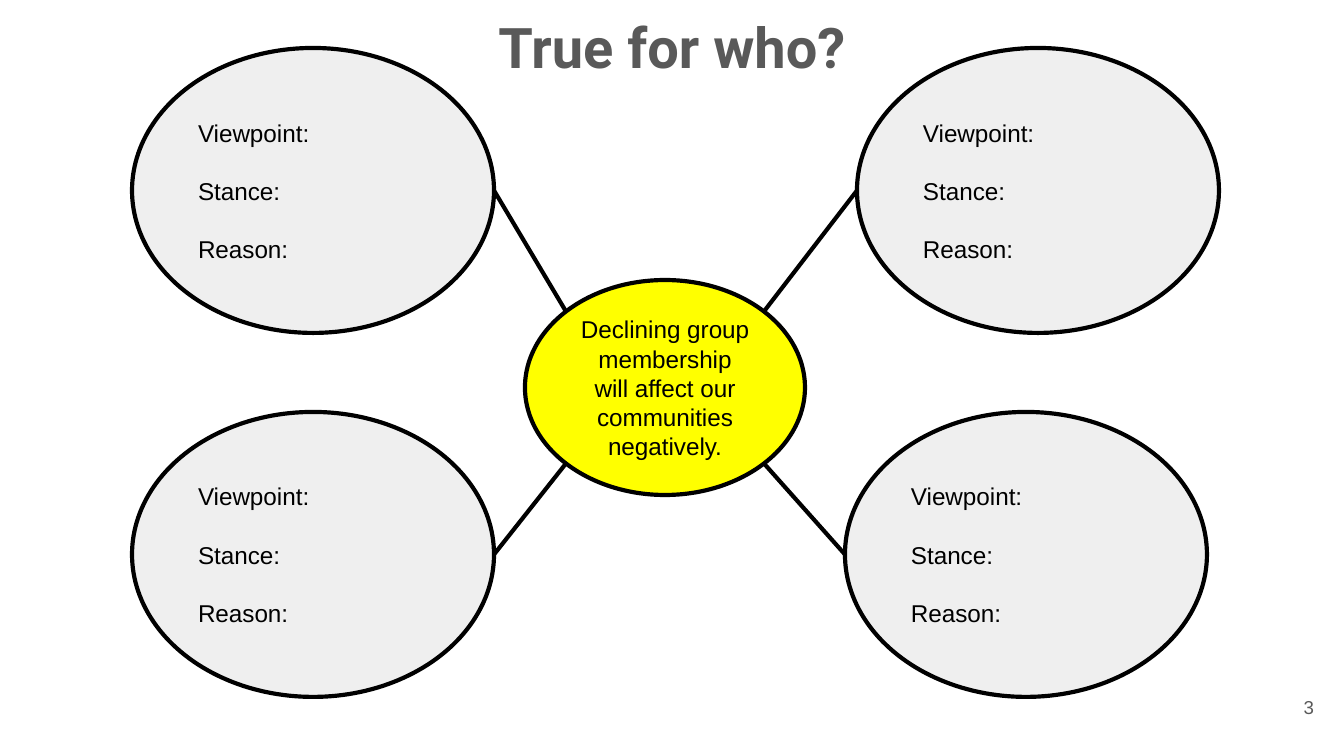
import math

from lxml import etree
from pptx import Presentation
from pptx.dml.color import RGBColor
from pptx.enum.shapes import MSO_CONNECTOR, MSO_SHAPE
from pptx.enum.text import MSO_ANCHOR, PP_ALIGN
from pptx.oxml.ns import qn
from pptx.util import Pt

ELLIPSE = MSO_SHAPE.OVAL
STRAIGHT = MSO_CONNECTOR.STRAIGHT
TOP, MIDDLE = MSO_ANCHOR.TOP, MSO_ANCHOR.MIDDLE
LEFT, CENTER, RIGHT = PP_ALIGN.LEFT, PP_ALIGN.CENTER, PP_ALIGN.RIGHT

BLACK = RGBColor(0x00, 0x00, 0x00)
GRAY = RGBColor(0x59, 0x59, 0x59)
PALE = RGBColor(0xEF, 0xEF, 0xEF)
YELLOW = RGBColor(0xFF, 0xFF, 0x00)

# Content
TITLE = "True for who?"
PAGE_NUMBER = "3"
CLAIM = "Declining group membership will affect our communities negatively."
PROMPTS = ["Viewpoint:", "Stance:", "Reason:"]

# Layout in px: left, top, width, height
PX = 914400 / 134.4
SLIDE_SIZE = (1344, 756)
TITLE_BOX = (172, 0, 1000, 95)
NUMBER_BOX = (1246, 685, 81, 58)
CLAIM_BOX = (525, 280, 280, 215)
VIEW_SIZE = (362, 285)
VIEW_CORNERS = [(857, 48), (845, 412), (132, 48), (132, 412)]
INSET = 13
OUTLINE = Pt(2.25)
PROMPT_GAP = Pt(15.5)


def emu(*lengths):
    return [round(length * PX) for length in lengths]


def write(shape, lines, size, color, align, anchor=TOP, font="Arial", bold=False, gap=Pt(0)):
    frame = shape.text_frame
    frame.word_wrap = True
    frame.vertical_anchor = anchor
    inset = emu(INSET)[0]
    frame.margin_left = frame.margin_right = inset
    frame.margin_top = frame.margin_bottom = inset
    for index, line in enumerate(lines):
        para = frame.add_paragraph() if index else frame.paragraphs[0]
        para.alignment = align
        if index:
            para.space_before = gap
        span = para.add_run()
        span.text = line
        span.font.name = font
        span.font.size = Pt(size)
        span.font.bold = bold
        span.font.color.rgb = color


def add_ellipse(page, place, fill):
    ellipse = page.shapes.add_shape(ELLIPSE, *emu(*place))
    ellipse.shadow.inherit = False
    ellipse.fill.solid()
    ellipse.fill.fore_color.rgb = fill
    ellipse.line.color.rgb = BLACK
    ellipse.line.width = OUTLINE
    return ellipse


def add_line(page, start, end):
    line = page.shapes.add_connector(STRAIGHT, *emu(*start, *end))
    line.line.color.rgb = BLACK
    line.line.width = OUTLINE
    etree.SubElement(line._element.spPr, qn("a:effectLst"))


deck = Presentation()
deck.slide_width, deck.slide_height = emu(*SLIDE_SIZE)
page = deck.slides.add_slide(deck.slide_layouts[6])

# Page number
number = page.shapes.add_textbox(*emu(*NUMBER_BOX))
write(number, [PAGE_NUMBER], 10, GRAY, RIGHT)

# Claim in the middle
claim = add_ellipse(page, CLAIM_BOX, YELLOW)
write(claim, [CLAIM], 13, BLACK, CENTER, MIDDLE)

# Four viewpoints
for corner in VIEW_CORNERS:
    view = add_ellipse(page, corner + VIEW_SIZE, PALE)
    write(view, PROMPTS, 13, BLACK, LEFT, MIDDLE, gap=PROMPT_GAP)

# Lines from each viewpoint's inner side to the claim's diagonal points
claim_left, claim_top, claim_width, claim_height = CLAIM_BOX
center_x = claim_left + claim_width / 2
center_y = claim_top + claim_height / 2
reach_x = claim_width / 2 * math.sqrt(0.5)
reach_y = claim_height / 2 * math.sqrt(0.5)
view_width, view_height = VIEW_SIZE
for left, top in VIEW_CORNERS:
    side = 1 if left > center_x else -1
    level = 1 if top > center_y else -1
    inner_x = left if side > 0 else left + view_width
    add_line(page, (inner_x, top + view_height / 2),
             (center_x + side * reach_x, center_y + level * reach_y))

# Title
title = page.shapes.add_textbox(*emu(*TITLE_BOX))
write(title, [TITLE], 30, GRAY, CENTER, font="Roboto", bold=True)

deck.save("out.pptx")
